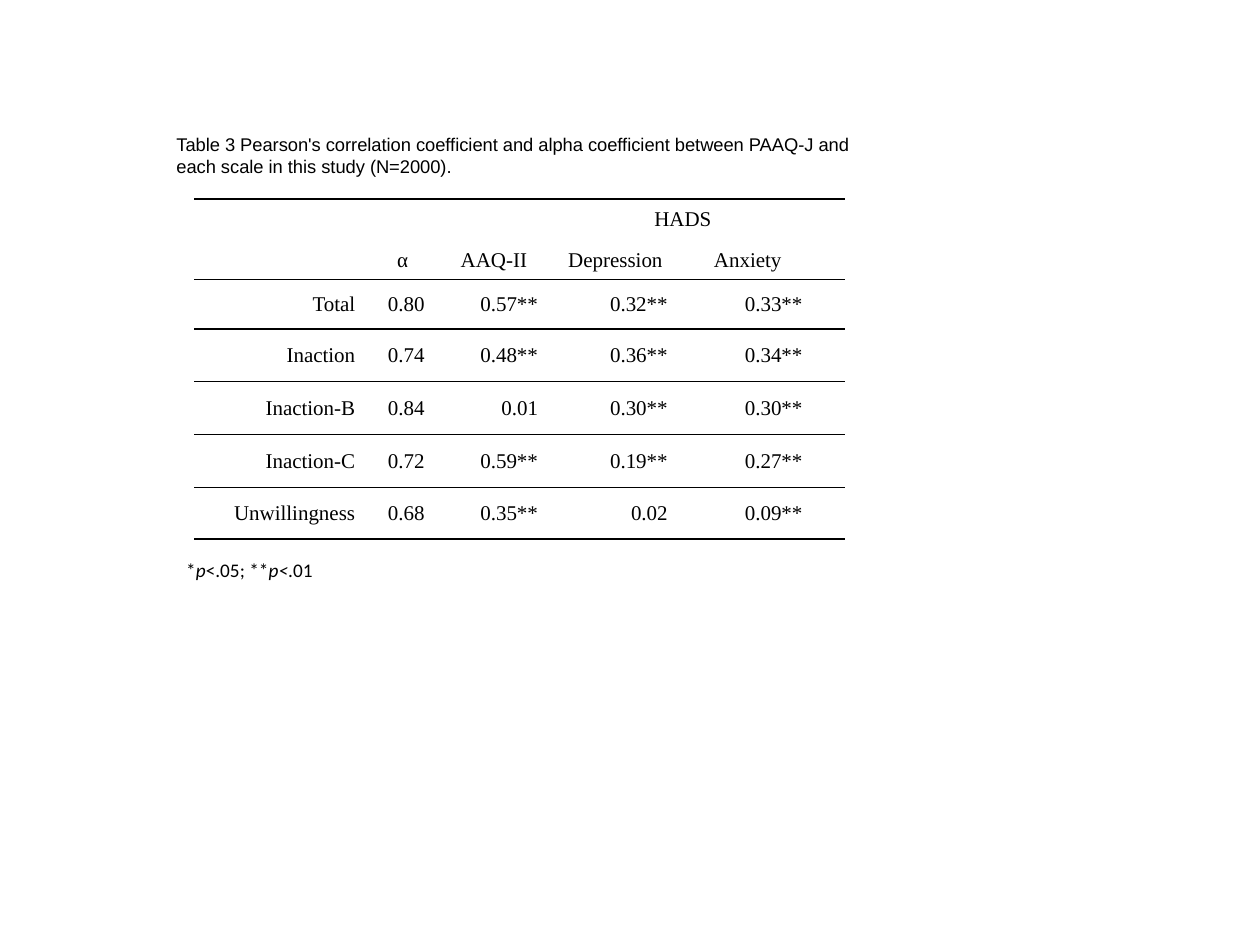
from lxml.etree import SubElement
from pptx import Presentation
from pptx.dml.color import RGBColor
from pptx.enum.text import MSO_ANCHOR as Anchor, PP_ALIGN as Align
from pptx.oxml.ns import qn
from pptx.util import Inches, Pt

BLACK = "000000"
NO_STYLE = "{2D5ABB26-0587-4C30-8999-92F81FD0307C}"
SERIF = "Times New Roman"
CELL_SIZE = 12

COLUMN_WIDTHS = [1.38, 0.55, 0.9, 0.24, 0.79, 0.24, 0.83, 0.23]
ROW_HEIGHTS = [0.33, 0.31, 0.39, 0.42, 0.42, 0.42, 0.41]
HEADER_ROWS = 2
VALUE_COLUMNS = [0, 1, 2, 4, 6]
# (row, first column, last column, text)
HEADINGS = [
    (0, 3, 6, "HADS"),
    (1, 1, 1, "α"),
    (1, 2, 2, "AAQ-II"),
    (1, 3, 4, "Depression"),
    (1, 5, 6, "Anxiety"),
]
SCALES = [
    ("Total", "0.80", "0.57**", "0.32**", "0.33**"),
    ("Inaction", "0.74", "0.48**", "0.36**", "0.34**"),
    ("Inaction-B", "0.84", "0.01", "0.30**", "0.30**"),
    ("Inaction-C", "0.72", "0.59**", "0.19**", "0.27**"),
    ("Unwillingness", "0.68", "0.35**", "0.02", "0.09**"),
]


def color(hex_code):
    return RGBColor.from_string(hex_code)


def add_span(para, text, font, size, italic=False):
    span = para.add_run()
    span.text = text
    span.font.name = font
    span.font.size = Pt(size)
    span.font.bold = False
    span.font.italic = italic
    span.font.color.rgb = color(BLACK)


def place(box, left, top, width, height):
    box.left, box.top = Inches(left), Inches(top)
    box.width, box.height = Inches(width), Inches(height)


def add_caption(page, text):
    box = page.shapes.title
    place(box, 1.3, 1.01, 5.67, 0.45)
    box.text_frame.word_wrap = True
    box.text_frame.vertical_anchor = Anchor.TOP
    para = box.text_frame.paragraphs[0]
    para.alignment = Align.LEFT
    add_span(para, text, "Arial", 10.5)


def add_note(page, spans):
    box = page.shapes.add_textbox(0, 0, 0, 0)
    place(box, 1.38, 4.38, 5.83, 0.29)
    box.text_frame.word_wrap = True
    for text, italic in spans:
        add_span(box.text_frame.paragraphs[0], text, "Calibri", 11, italic)


def add_border(cell, side, width):
    line = SubElement(cell._tc.get_or_add_tcPr(), qn(f"a:ln{side}"), w=str(Pt(width)))
    fill = SubElement(line, qn("a:solidFill"))
    SubElement(fill, qn("a:srgbClr"), val=BLACK)


def write_cell(cell, text, alignment):
    para = cell.text_frame.paragraphs[0]
    para.alignment = alignment
    add_span(para, text, SERIF, CELL_SIZE)


def style_cell(cell, row):
    """Rule the cell and keep an empty one from stretching its row."""
    if row == 0:
        add_border(cell, "T", 1.5)
    else:
        if row >= HEADER_ROWS:
            add_border(cell, "T", 1)
        if row >= HEADER_ROWS - 1:
            add_border(cell, "B", 1)
    cell.fill.background()
    cell.vertical_anchor = Anchor.MIDDLE
    para = cell.text_frame.paragraphs[0]
    SubElement(para._p, qn("a:endParaRPr"), sz=str(CELL_SIZE * 100))


def add_correlation_table(page):
    frame = page.shapes.add_table(
        len(ROW_HEIGHTS), len(COLUMN_WIDTHS), Inches(1.54), Inches(1.58),
        Inches(sum(COLUMN_WIDTHS)), Inches(sum(ROW_HEIGHTS)))
    table = frame.table
    table.first_row = table.horz_banding = False
    table._tbl.tblPr.find(qn("a:tableStyleId")).text = NO_STYLE
    for column, width in zip(table.columns, COLUMN_WIDTHS):
        column.width = Inches(width)
    for row, height in zip(table.rows, ROW_HEIGHTS):
        row.height = Inches(height)

    for row, first, last, text in HEADINGS:
        cell = table.cell(row, first)
        if last > first:
            cell.merge(table.cell(row, last))
        write_cell(cell, text, Align.CENTER)
    for row, values in enumerate(SCALES, HEADER_ROWS):
        for column, text in zip(VALUE_COLUMNS, values):
            write_cell(table.cell(row, column), text, Align.RIGHT)
    for row in range(len(ROW_HEIGHTS)):
        for column in range(len(COLUMN_WIDTHS)):
            style_cell(table.cell(row, column), row)


def main():
    deck = Presentation()
    deck.slide_width, deck.slide_height = Inches(10), Inches(7.5)
    page = deck.slides.add_slide(deck.slide_layouts.get_by_name("Title Only"))
    add_correlation_table(page)
    add_caption(page, "Table 3 Pearson's correlation coefficient and alpha coefficient "
                      "between PAAQ-J and each scale in this study (N=2000).")
    add_note(page, [("*", False), ("p", True), ("<.05; **", False),
                    ("p<", True), (".01", False)])
    deck.save("out.pptx")


if __name__ == "__main__":
    main()
